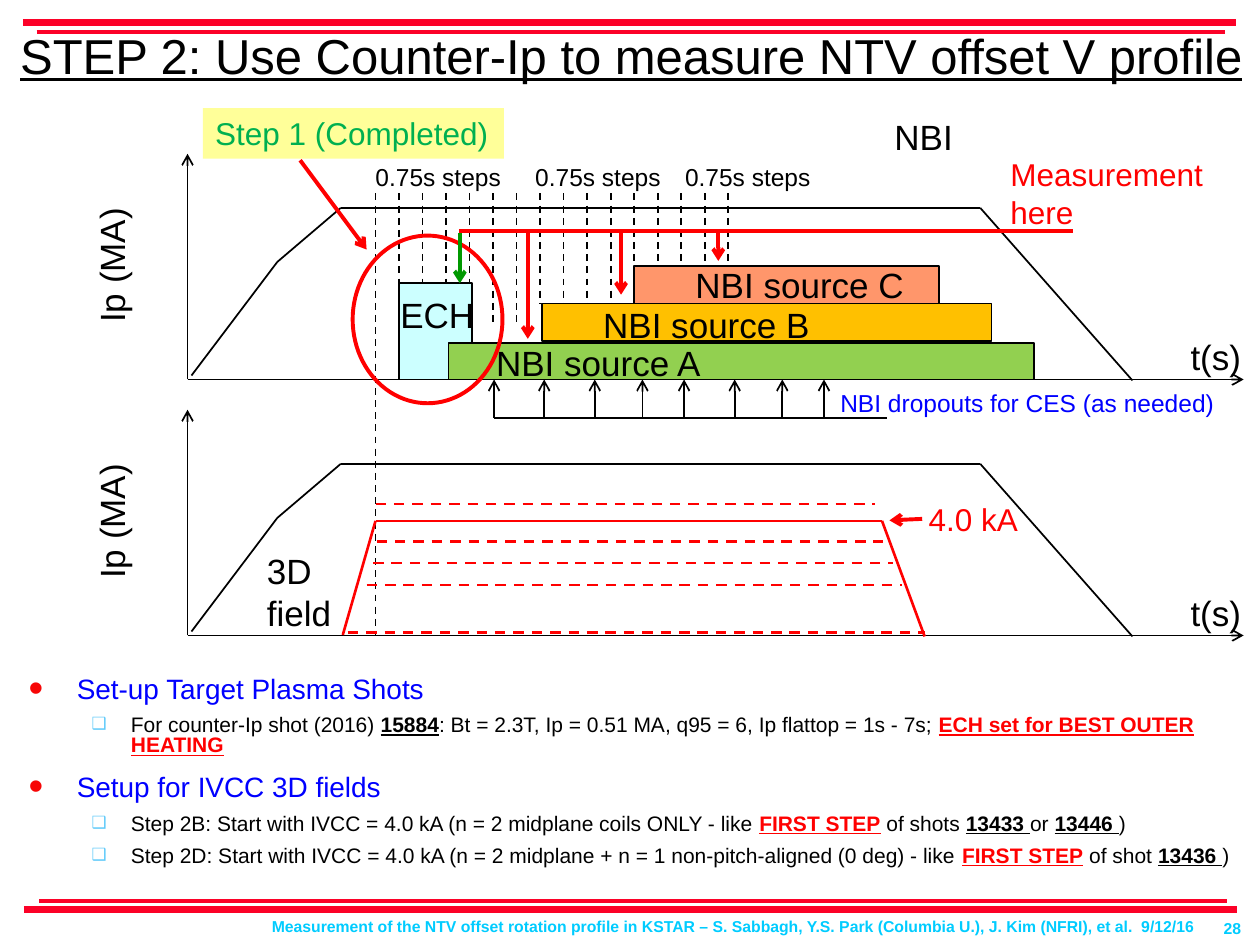
"""Build the slide on counter-Ip shots that measure the NTV offset velocity profile."""
from lxml.etree import SubElement
from pptx import Presentation
from pptx.dml.color import RGBColor
from pptx.enum.dml import MSO_LINE
from pptx.enum.shapes import MSO_CONNECTOR, MSO_SHAPE
from pptx.enum.text import MSO_ANCHOR, MSO_AUTO_SIZE, PP_ALIGN
from pptx.oxml.ns import qn
from pptx.util import Cm, Pt

COLORS = {
    "black": "000000", "red": "FF0000", "band": "FC0128", "green": "009900",
    "done": "00B050", "note": "FFFF99", "blue": "0000FF", "footer": "00CCFF",
    "ech": "CCFFFF", "source A": "92D050", "source B": "FFC000", "source C": "FF966B",
    "dot": "F70606", "box": "5FCAFA",
}
COLORS = {name: RGBColor.from_string(code) for name, code in COLORS.items()}

prs = Presentation()
prs.slide_width, prs.slide_height = Cm(25.4), Cm(19.05)
slide = prs.slides.add_slide(prs.slide_layouts[5])
shapes = slide.shapes


def draw_line(x1, y1, x2, y2, color="black", width=1, dashed=False, arrow=False):
    line = shapes.add_connector(MSO_CONNECTOR.STRAIGHT, Cm(x1), Cm(y1), Cm(x2), Cm(y2))
    line.line.color.rgb = COLORS[color]
    line.line.width = Pt(width)
    if dashed:
        line.line.dash_style = MSO_LINE.DASH
    if arrow:
        SubElement(line.line._get_or_add_ln(), qn("a:tailEnd"), type="arrow")
    SubElement(line._element.spPr, qn("a:effectLst"))


def add_label(text, left, top, width, height, size=20, color="black", wrap=False):
    label = shapes.add_textbox(Cm(left), Cm(top), Cm(width), Cm(height))
    frame = label.text_frame
    frame.text = text
    frame.word_wrap = wrap
    for paragraph in frame.paragraphs:
        paragraph.font.size = Pt(size)
        paragraph.font.name = "Arial"
        paragraph.font.color.rgb = COLORS[color]
    return label


for left, right, y, width in [(0.48, 24.94, 18.34, 4), (0.79, 24.74, 18.16, 2),
                              (0.46, 24.92, 0.46, 4), (0.74, 24.69, 0.64, 2)]:
    draw_line(left, y, right, y, "band", width)

page_number = add_label("28", 23.16, 18.49, 2.11, 0.43, 9, "footer", True)
page_number.text_frame.vertical_anchor = MSO_ANCHOR.MIDDLE
page_number.text_frame.paragraphs[0].alignment = PP_ALIGN.RIGHT
footer = add_label(
    "Measurement of the NTV offset rotation profile in KSTAR – S. Sabbagh, "
    "Y.S. Park (Columbia U.), J. Kim (NFRI), et al.  9/12/16",
    5.23, 18.36, 19.69, 0.64, 9, "footer", True)
for credit in (page_number, footer):
    credit.text_frame.paragraphs[0].font.bold = True

title = shapes.title
title.left, title.top, title.width, title.height = Cm(0.05), Cm(0.15), Cm(25.35), Cm(1.9)
title.text_frame.text = "STEP 2: Use Counter-Ip to measure NTV offset V profile"
title.text_frame.auto_size = MSO_AUTO_SIZE.NONE
title.text_frame.vertical_anchor = MSO_ANCHOR.MIDDLE
heading = title.text_frame.paragraphs[0]
heading.alignment = PP_ALIGN.CENTER
heading.font.size = Pt(28)
heading.font.name = "Arial"
heading.font.underline = True
heading.font.color.rgb = COLORS["black"]

ip_trace = [(3.86, 7.57), (5.59, 5.28), (6.87, 4.19), (19.76, 4.19), (22.83, 7.67)]
for drop in (0, 5.16):
    draw_line(3.78, 7.65 + drop, 3.78, 3.1 + drop, arrow=True)
    draw_line(3.78, 7.65 + drop, 25.07, 7.65 + drop, arrow=True)
    for (x1, y1), (x2, y2) in zip(ip_trace, ip_trace[1:]):
        draw_line(x1, y1 + drop, x2, y2 + drop)
    add_label("t(s)", 23.75, 6.63 + drop, 1.52, 1.12)
    add_label("Ip (MA)", 0.83, 4.78 + drop, 2.84, 1.12).rotation = 270

first_step, last_step, step_count = 7.57, 14.68, 15
for step in range(step_count + 1):
    x = first_step + step * (last_step - first_step) / step_count
    bottom = 12.8 if step == 0 else 6.57 if step < 7 else 6.12 if step < 12 else 5.36
    draw_line(x, 3.9, x, bottom, dashed=True)

for x in (9.96, 10.97, 11.99, 12.95, 13.79, 14.81, 15.77, 16.61):
    draw_line(x, 8.42, x, 7.65, arrow=True)
for left, right in [(9.96, 15.06), (13.79, 17.88)]:
    draw_line(left, 8.42, right, 8.42)

for fill, left, top, width, height in [
    ("source C", 12.78, 5.36, 6.15, 0.76),
    ("source B", 10.92, 6.12, 9.07, 0.76),
    ("ech", 8.05, 5.71, 1.47, 1.94),
    ("source A", 9.04, 6.91, 11.81, 0.74),
]:
    heating = shapes.add_shape(MSO_SHAPE.RECTANGLE, Cm(left), Cm(top), Cm(width), Cm(height))
    heating.shadow.inherit = False
    heating.fill.solid()
    heating.fill.fore_color.rgb = COLORS[fill]
    heating.line.color.rgb = COLORS["black"]
    heating.line.width = Pt(1)

for text, left, top, width in [
    ("NBI source A", 9.75, 6.76, 4.67), ("NBI source B", 11.91, 5.99, 4.67),
    ("NBI source C", 13.77, 5.18, 4.75), ("ECH", 7.82, 5.79, 2.03), ("NBI", 17.78, 2.21, 1.7),
]:
    add_label(text, left, top, width, 1.12)
for left in (7.32, 10.54, 13.56):
    add_label("0.75s steps", left, 3.14, 3.05, 0.86, 14)
add_label("NBI dropouts for CES (as needed)", 16.69, 7.7, 8.08, 0.86, 14, "blue")
add_label("3D\nfield", 5.13, 10.95, 1.83, 1.96)

coil_current = [(6.91, 12.8), (7.57, 10.5), (17.78, 10.5), (18.64, 12.83)]
for start, end in zip(coil_current, coil_current[1:]):
    draw_line(*start, *end, "red", 1.5)
for left, right, y in [(7.57, 17.63, 10.16), (7.59, 17.81, 10.92), (7.52, 18.01, 11.35),
                       (7.39, 18.19, 11.79), (7.01, 18.64, 12.75)]:
    draw_line(left, y, right, y, "red", 1.5, dashed=True)
add_label("4.0 kA", 18.47, 9.96, 2.34, 1.02, 18, "red")
draw_line(18.59, 10.46, 17.93, 10.49, "red", 2.25, arrow=True)

ech_ring = shapes.add_shape(MSO_SHAPE.OVAL, Cm(7.11), Cm(4.75), Cm(3.02), Cm(3.38))
ech_ring.shadow.inherit = False
ech_ring.fill.background()
ech_ring.line.color.rgb = COLORS["red"]
ech_ring.line.width = Pt(2.25)
draw_line(6.05, 3.23, 7.39, 5.03, "red", 2.25, arrow=True)
completed = add_label("Step 1 (Completed)", 4.09, 2.18, 6.07, 1.02, 18, "done")
completed.fill.solid()
completed.fill.fore_color.rgb = COLORS["note"]

for x, bottom in [(10.64, 6.83), (12.52, 5.94), (14.48, 5.26)]:
    draw_line(x, 4.65, x, bottom, "red", 2.25, arrow=True)
draw_line(9.25, 4.65, 21.64, 4.65, "red", 2.25)
draw_line(9.27, 4.7, 9.27, 5.71, "green", 2.25, arrow=True)
add_label("Measurement here", 20.12, 3, 4.93, 1.8, 18, "red", True)

plan = [
    (0, [("Set-up Target Plasma Shots", "blue", False)]),
    (1, [("For counter-Ip shot (2016) ", "black", False), ("15884", "black", True),
         (": Bt = 2.3T, Ip = 0.51 MA, q95 = 6, Ip flattop = 1s - 7s; ", "black", False),
         ("ECH set for BEST OUTER HEATING", "red", True)]),
    (0, [("Setup for IVCC 3D fields", "blue", False)]),
    (1, [("Step 2B: Start with IVCC = 4.0 kA (n = 2 midplane coils ONLY - like ", "black", False),
         ("FIRST STEP", "red", True), (" of shots ", "black", False),
         ("13433 ", "black", True), ("or ", "black", False),
         ("13446 ", "black", True), (")", "black", False)]),
    (1, [("Step 2D: Start with IVCC = 4.0 kA (n = 2 midplane + n = 1 non-pitch-aligned (0 deg)"
          " - like ", "black", False),
         ("FIRST STEP", "red", True), (" of shot ", "black", False),
         ("13436 ", "black", True), (")", "black", False)]),
]
bullet_styles = [("•", "dot", 150000, 0.97, 0.97, 16, 11),
                 ("❑", "box", 80000, 2.06, 0.79, 12, 6.8)]
plan_frame = shapes.add_textbox(Cm(0.33), Cm(13.54), Cm(24.74), Cm(5.16)).text_frame
plan_frame.word_wrap = True
for index, (level, pieces) in enumerate(plan):
    mark, mark_color, mark_size, margin, hanging, size, gap = bullet_styles[level]
    item = plan_frame.add_paragraph() if index else plan_frame.paragraphs[0]
    item.level = level
    item.line_spacing = 0.8
    item.space_before = Pt(gap if index else 0)
    properties = item._p.get_or_add_pPr()
    properties.set("marL", str(Cm(margin)))
    properties.set("indent", str(-Cm(hanging)))
    bullet_color = SubElement(properties, qn("a:buClr"))
    SubElement(bullet_color, qn("a:srgbClr"), val=str(COLORS[mark_color]))
    SubElement(properties, qn("a:buSzPct"), val=str(mark_size))
    SubElement(properties, qn("a:buFont"), typeface="Arial")
    SubElement(properties, qn("a:buChar"), char=mark)
    for text, color, stressed in pieces:
        run = item.add_run()
        run.text = text
        run.font.name = "Arial"
        run.font.size = Pt(size)
        run.font.bold = run.font.underline = stressed
        run.font.color.rgb = COLORS[color]

prs.save("out.pptx")
